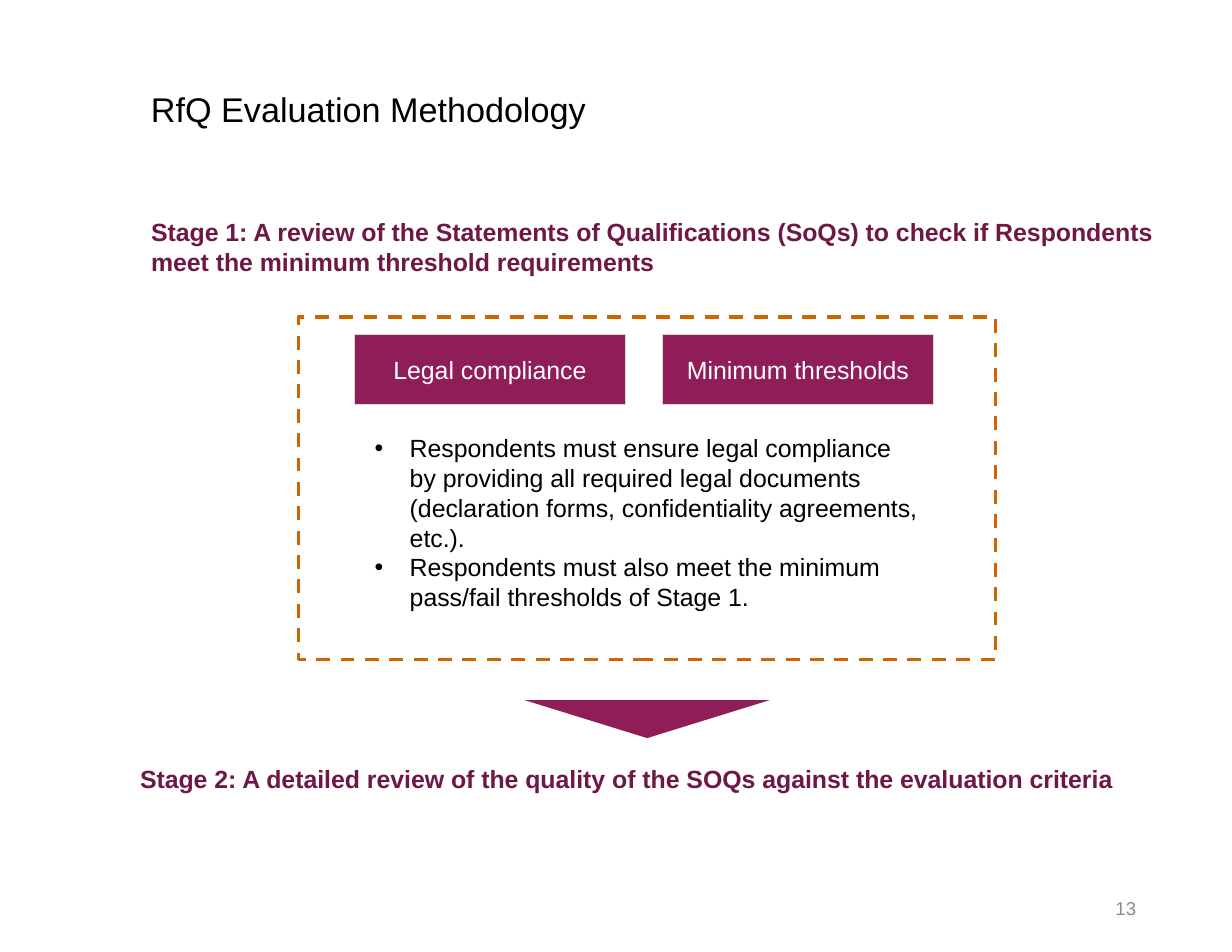
from dataclasses import dataclass

from lxml.etree import SubElement
from pptx import Presentation
from pptx.dml.color import RGBColor
from pptx.enum.dml import MSO_LINE
from pptx.enum.shapes import MSO_SHAPE
from pptx.enum.text import MSO_ANCHOR, PP_ALIGN
from pptx.oxml.ns import qn
from pptx.util import Pt


@dataclass(frozen=True)
class Theme:
    """Colours, font and type sizes of the slide."""
    font: str = "Arial"
    black: str = "000000"
    white: str = "FFFFFF"
    grey: str = "8C8C8C"
    edge: str = "D9D9D9"
    plum: str = "8E1D58"
    dark_plum: str = "6F1745"
    orange: str = "CC6600"
    title: int = 22
    body: int = 16
    small: int = 12


THEME = Theme()


def set_font(p, size, color, bold=False):
    """Format every run of a paragraph."""
    for r in p.runs:
        r.font.name = THEME.font
        r.font.size = Pt(size)
        r.font.bold = bold
        r.font.color.rgb = RGBColor.from_string(color)


def add_text(s, box, text, size, color, bold=False, align=PP_ALIGN.LEFT,
             anchor=MSO_ANCHOR.TOP, inset=True):
    """Add a wrapped one-paragraph text box and return its paragraph."""
    tf = s.shapes.add_textbox(*map(Pt, box)).text_frame
    tf.word_wrap = True
    tf.vertical_anchor = anchor
    if not inset:
        tf.margin_left = tf.margin_right = tf.margin_top = tf.margin_bottom = 0
    tf.text = text
    p = tf.paragraphs[0]
    p.alignment = align
    set_font(p, size, color, bold)
    return p


def add_shape(s, kind, box, fill=None, line=None, width=0.5):
    """Add a flat preset shape with optional fill and line."""
    sp = s.shapes.add_shape(kind, *map(Pt, box))
    sp.shadow.inherit = False
    if fill:
        sp.fill.solid()
        sp.fill.fore_color.rgb = RGBColor.from_string(fill)
    else:
        sp.fill.background()
    if line:
        sp.line.color.rgb = RGBColor.from_string(line)
        sp.line.width = Pt(width)
    else:
        sp.line.fill.background()
    return sp


def add_label(s, box, text):
    """Add a filled box with a centred label."""
    sp = add_shape(s, MSO_SHAPE.RECTANGLE, box, THEME.plum, THEME.edge)
    tf = sp.text_frame
    tf.text = text
    tf.vertical_anchor = MSO_ANCHOR.MIDDLE
    p = tf.paragraphs[0]
    p.alignment = PP_ALIGN.CENTER
    set_font(p, THEME.body, THEME.white)


def add_bullets(s, box, items):
    """Add a rounded panel with a bulleted list."""
    sp = add_shape(s, MSO_SHAPE.ROUNDED_RECTANGLE, box)
    sp.adjustments[0] = 0.044
    tf = sp.text_frame
    tf.vertical_anchor = MSO_ANCHOR.MIDDLE
    tf.text = "\n".join(items)
    for p in tf.paragraphs:
        p.alignment = PP_ALIGN.LEFT
        pPr = p._p.get_or_add_pPr()
        pPr.set("marL", str(Pt(26.9)))
        pPr.set("indent", str(Pt(-22.5)))
        SubElement(pPr, qn("a:buFont"), typeface=THEME.font)
        SubElement(pPr, qn("a:buChar"), char="•")
        set_font(p, THEME.body, THEME.black)


def main():
    """Build the slide and save it."""
    prs = Presentation()
    prs.slide_width, prs.slide_height = Pt(792), Pt(612)
    s = prs.slides.add_slide(prs.slide_layouts[6])

    p = add_text(s, (90, 56, 648, 55.5), "RfQ Evaluation Methodology",
                 THEME.title, THEME.black)
    p.line_spacing = 0.9
    add_text(s, (559.5, 567.5, 178, 32.5), "13", THEME.small, THEME.grey,
             align=PP_ALIGN.RIGHT, anchor=MSO_ANCHOR.MIDDLE)
    add_text(s, (90, 135.5, 675, 46),
             "Stage 1: A review of the Statements of Qualifications (SoQs) to check "
             "if Respondents meet the minimum threshold requirements",
             THEME.body, THEME.dark_plum, bold=True)
    add_bullets(s, (227.5, 261.5, 372.5, 148.5), [
        "Respondents must ensure legal compliance by providing all required legal "
        "documents (declaration forms, confidentiality agreements, etc.).",
        "Respondents must also meet the minimum pass/fail thresholds of Stage 1.",
    ])
    add_text(s, (90, 491, 675, 19.5),
             "Stage 2: A detailed review of the quality of the SOQs against the "
             "evaluation criteria",
             THEME.body, THEME.dark_plum, bold=True, inset=False)

    frame = add_shape(s, MSO_SHAPE.RECTANGLE, (192, 203.75, 448, 220.25),
                      line=THEME.orange, width=2.25)
    frame.line.dash_style = MSO_LINE.DASH
    arrow = add_shape(s, MSO_SHAPE.ISOSCELES_TRIANGLE, (337, 450, 158, 24.5), THEME.plum)
    arrow.rotation = 180
    for i, text in enumerate(["Legal compliance", "Minimum thresholds"]):
        add_label(s, (228 + 198 * i, 215.25, 174, 45), text)

    prs.save("out.pptx")


if __name__ == "__main__":
    main()
